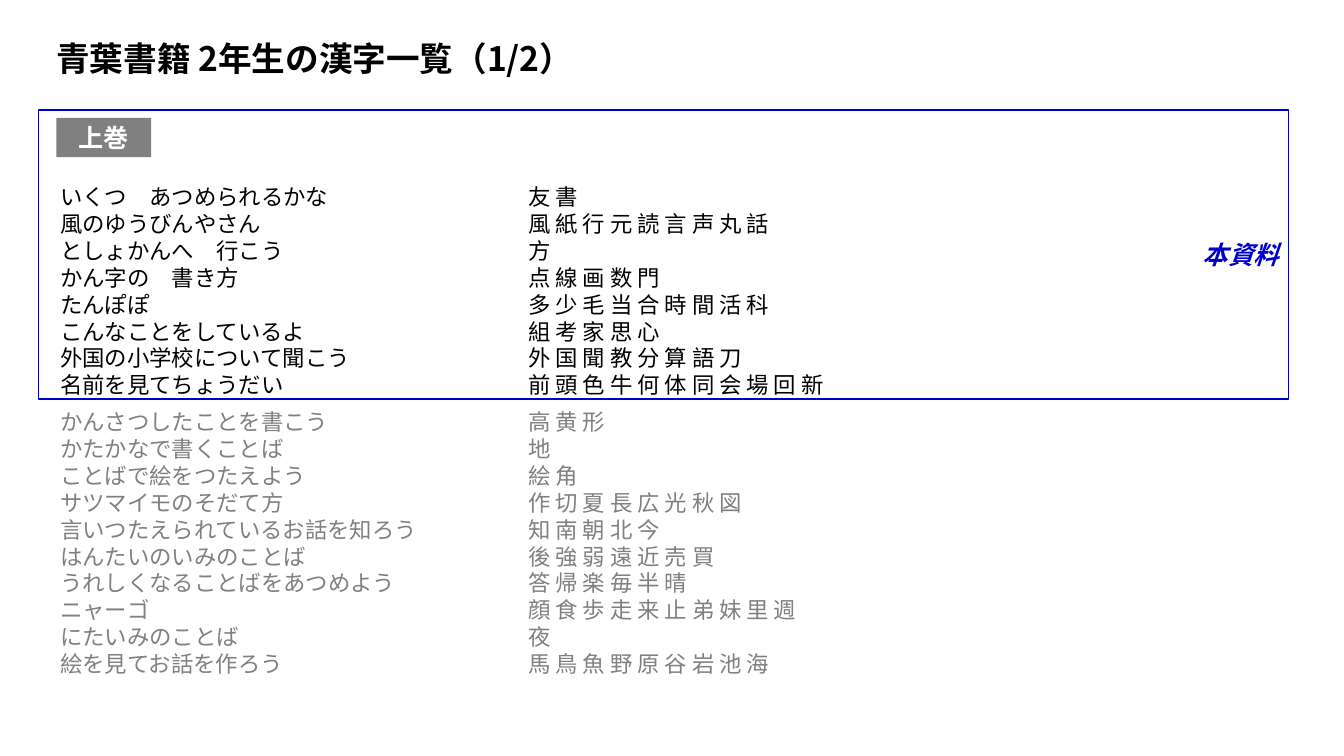
"""Build a slide listing second-grade kanji by textbook unit."""
import pptx
import pptx.dml.color
import pptx.enum.shapes
import pptx.enum.text
import pptx.oxml
import pptx.oxml.ns
import pptx.util

INCH, PT = pptx.util.Inches, pptx.util.Pt
RGB = pptx.dml.color.RGBColor
BLACK, WHITE = RGB(0, 0, 0), RGB(255, 255, 255)
GRAY, BLUE = RGB(0x80, 0x80, 0x80), RGB(0, 0, 0xCC)
FACE = "Noto Sans CJK JP"
ALIGN = pptx.enum.text.PP_ALIGN
RECT = pptx.enum.shapes.MSO_SHAPE.RECTANGLE
NS = pptx.oxml.ns.nsdecls("a")
LEAD = 19.2
TAB = 4.64

DONE = [
    ("いくつ　あつめられるかな", "友 書"),
    ("風のゆうびんやさん", "風 紙 行 元 読 言 声 丸 話"),
    ("としょかんへ　行こう", "方"),
    ("かん字の　書き方", "点 線 画 数 門"),
    ("たんぽぽ", "多 少 毛 当 合 時 間 活 科"),
    ("こんなことをしているよ", "組 考 家 思 心"),
    ("外国の小学校について聞こう", "外 国 聞 教 分 算 語 刀"),
    ("名前を見てちょうだい", "前 頭 色 牛 何 体 同 会 場 回 新"),
]
REST = [
    ("かんさつしたことを書こう", "高 黄 形"),
    ("かたかなで書くことば", "地"),
    ("ことばで絵をつたえよう", "絵 角"),
    ("サツマイモのそだて方", "作 切 夏 長 広 光 秋 図"),
    ("言いつたえられているお話を知ろう", "知 南 朝 北 今"),
    ("はんたいのいみのことば", "後 強 弱 遠 近 売 買"),
    ("うれしくなることばをあつめよう", "答 帰 楽 毎 半 晴"),
    ("ニャーゴ", "顔 食 歩 走 来 止 弟 妹 里 週"),
    ("にたいみのことば", "夜"),
    ("絵を見てお話を作ろう", "馬 鳥 魚 野 原 谷 岩 池 海"),
]


def write(para, text, size, color, bold=False):
    """Fill a paragraph and return its font element."""
    para.text = text
    font = para.font
    font.size, font.name, font.bold = PT(size), FACE, bold
    font.color.rgb = color
    props = para._p.pPr.find(pptx.oxml.ns.qn("a:defRPr"))
    props.append(pptx.oxml.parse_xml(f'<a:ea {NS} typeface="{FACE}"/>'))
    return props


deck = pptx.Presentation()
deck.slide_width, deck.slide_height = INCH(13.33), INCH(7.5)
slide = deck.slides.add_slide(deck.slide_layouts[6])
shapes = slide.shapes

units = shapes.add_textbox(INCH(0.5), INCH(1.77), INCH(9.56), INCH(5.2)).text_frame
units.word_wrap = True
for row, (unit, kanji) in enumerate(DONE + REST):
    para = units.add_paragraph() if row else units.paragraphs[0]
    para.line_spacing = PT(LEAD)
    if row == len(DONE):
        para.space_before = PT(7.2)
    color = BLACK if row < len(DONE) else GRAY
    props = write(para, f"{unit}\t{kanji}", 16, color)
    props.addprevious(pptx.oxml.parse_xml(
        f'<a:tabLst {NS}><a:tab pos="{INCH(TAB)}" algn="l"/></a:tabLst>'))

title = shapes.add_textbox(INCH(0.46), INCH(0.3), INCH(9.69), INCH(0.51)).text_frame
title.word_wrap = True
title.paragraphs[0].line_spacing = PT(31)
write(title.paragraphs[0], "青葉書籍 2年生の漢字一覧（1/2）", 24, BLACK, True)

badge = shapes.add_shape(RECT, INCH(0.56), INCH(1.17), INCH(0.94), INCH(0.39))
badge.fill.solid()
badge.fill.fore_color.rgb = GRAY
badge.line.fill.background()

frame = shapes.add_shape(RECT, INCH(0.38), INCH(1.09), INCH(12.4), INCH(2.87))
frame.fill.background()
frame.line.color.rgb = BLUE
frame.line.width = PT(1)

for box, text, color, side in (
    (badge, "上巻", WHITE, ALIGN.CENTER),
    (frame, "本資料", BLUE, ALIGN.RIGHT),
):
    box.shadow.inherit = False
    box.text_frame.vertical_anchor = pptx.enum.text.MSO_ANCHOR.MIDDLE
    para = box.text_frame.paragraphs[0]
    write(para, text, 18, color, True)
    para.alignment = side
frame.text_frame.paragraphs[0].font.italic = True

deck.save("out.pptx")
